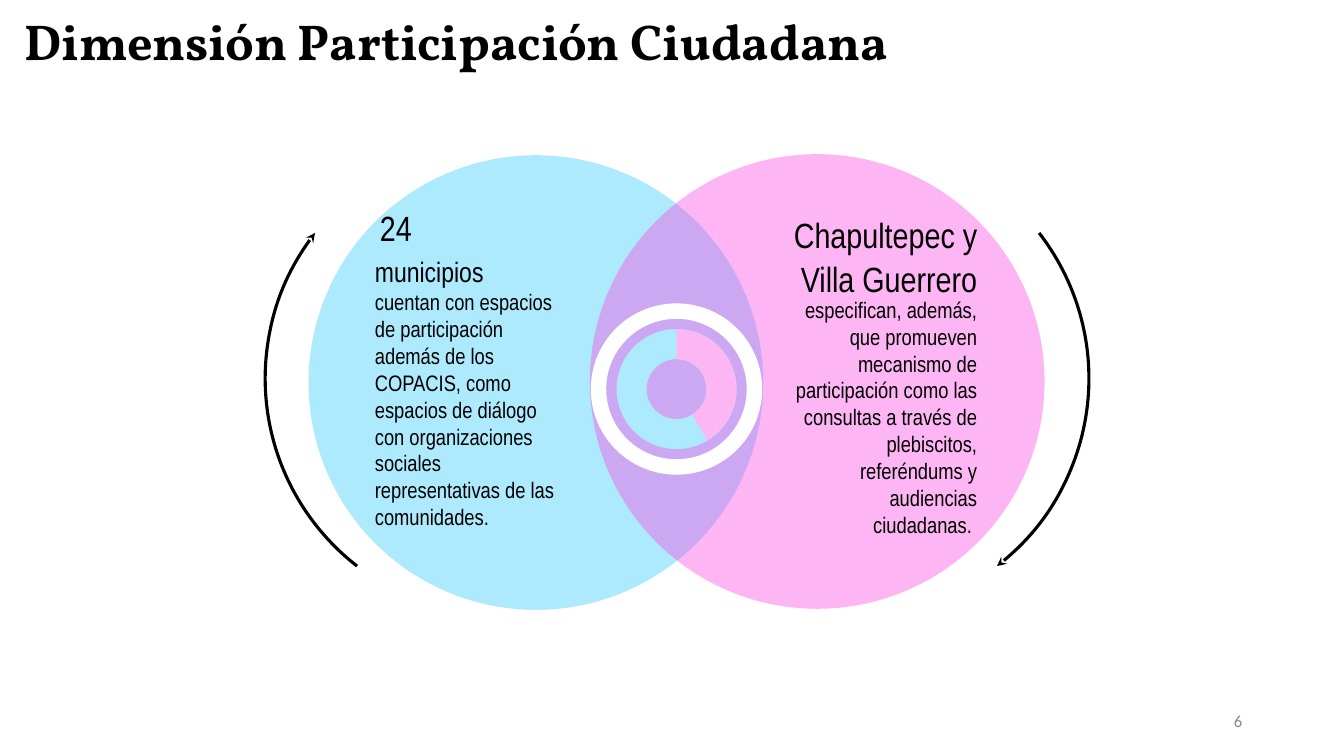
from lxml import etree
from pptx import Presentation
from pptx import util as u
from pptx.dml.color import RGBColor
from pptx.enum import shapes, text
from pptx.oxml.ns import qn

TITLE = "Dimensión Participación Ciudadana"
PAGE_NUMBER = "6"
COLORS = {"black": "000000", "grey": "888888", "white": "FFFFFF",
          "blue": "AEEAFE", "magenta": "FA47E3", "pink": "FDB6F4"}
WIDTH, HEIGHT = 13.33, 7.5
LEFT, RIGHT = text.PP_ALIGN.LEFT, text.PP_ALIGN.RIGHT
CIRCLE, ARC_SIZE = 4.51, 4.71
ARC_TOP, ARC_TILT = 1.4, 52.2
HUB = (6.71, 3.86)

# circle left and top, fill, opacity %, arc left, mirrored, arrow end
SIDES = [
    (3.06, 1.54, "blue", 100, 2.63, True, "headEnd"),
    (5.85, 1.53, "magenta", 40, 6.09, False, "tailEnd"),
]
# preset, diameter, fill, rotation, adjustments; all centred on the hub
RINGS = [
    (shapes.MSO_SHAPE.DONUT, 1.19, "blue", 0, [0.25]),
    (shapes.MSO_SHAPE.BLOCK_ARC, 1.19, "pink", 90, [107.96, 197.3, 0.25]),
    (shapes.MSO_SHAPE.DONUT, 1.7, "white", 0, [0.09]),
]
# text, size, alignment, left, top, width, height
LABELS = [
    ("cuentan con espacios de participación además de los COPACIS, como "
     "espacios de diálogo con organizaciones sociales representativas de las "
     "comunidades.", 16, LEFT, 3.62, 2.91, 2.02, 2.3),
    ("municipios", 20, LEFT, 3.62, 2.49, 2.02, 0.41),
    ("24", 25, LEFT, 3.67, 2.05, 2.02, 0.41),
    ("especifican, además, que promueven mecanismo de participación como las "
     "consultas a través de plebiscitos, referéndums y audiencias "
     "ciudadanas. ", 16, RIGHT, 7.77, 2.99, 2.02, 2.29),
    ("Villa Guerrero", 25, RIGHT, 7.31, 2.6, 2.48, 0.32),
    ("Chapultepec y", 25, RIGHT, 7.56, 2.05, 2.23, 0.55),
]


def rgb(name):
    return RGBColor.from_string(COLORS[name])


def inches(*lengths):
    return [u.Inches(length) for length in lengths]


def write(shape, content, size, font, color, alignment, inset=0.1, bold=False,
          anchor=text.MSO_ANCHOR.MIDDLE):
    frame = shape.text_frame
    frame.text = content
    frame.word_wrap = True
    frame.auto_size = text.MSO_AUTO_SIZE.NONE
    frame.vertical_anchor = anchor
    frame.margin_left = frame.margin_right = u.Inches(0.1)
    frame.margin_top = frame.margin_bottom = u.Inches(inset)
    paragraph = frame.paragraphs[0]
    paragraph.alignment = alignment
    run_font = paragraph.runs[0].font
    run_font.name, run_font.size, run_font.bold = font, u.Pt(size), bold
    run_font.color.rgb = rgb(color)


def add_filled(slide, preset, left, top, size, fill):
    shape = slide.shapes.add_shape(preset, *inches(left, top, size, size))
    shape.shadow.inherit = False
    shape.fill.solid()
    shape.fill.fore_color.rgb = rgb(fill)
    shape.line.fill.background()
    return shape


def add_arc_arrow(slide, left, mirrored, arrow_end):
    arc = slide.shapes.add_shape(
        shapes.MSO_SHAPE.ARC, *inches(left, ARC_TOP, ARC_SIZE, ARC_SIZE))
    arc.shadow.inherit = False
    arc.fill.background()
    arc.line.color.rgb = rgb("black")
    arc.line.width = u.Pt(2.25)
    arc.rotation = 360 - ARC_TILT if mirrored else ARC_TILT
    properties = arc.element.spPr
    if mirrored:
        properties.find(qn("a:xfrm")).set("flipH", "1")
    etree.SubElement(properties.find(qn("a:ln")), qn("a:" + arrow_end),
                     type="stealth")


def add_side(slide, left, top, fill, opacity, arc_left, mirrored, arrow_end):
    add_arc_arrow(slide, arc_left, mirrored, arrow_end)
    circle = add_filled(slide, shapes.MSO_SHAPE.OVAL, left, top, CIRCLE, fill)
    if opacity < 100:
        color = circle.element.spPr.find(qn("a:solidFill"))[0]
        etree.SubElement(color, qn("a:alpha"), val=str(opacity * 1000))


def main():
    presentation = Presentation()
    presentation.slide_width, presentation.slide_height = inches(WIDTH, HEIGHT)
    slide = presentation.slides.add_slide(presentation.slide_layouts[5])

    number = slide.shapes.add_textbox(*inches(9.42, 6.95, 3, 0.4))
    write(number, PAGE_NUMBER, 12, "Calibri", "grey", RIGHT, inset=0.05)

    title = slide.shapes.title
    title.left, title.top, title.width, title.height = inches(0.14, 0, 10.47, 0.81)
    write(title, TITLE, 36, "Vollkorn", "black", text.PP_ALIGN.JUSTIFY,
          bold=True, anchor=text.MSO_ANCHOR.TOP)

    for side in SIDES:
        add_side(slide, *side)

    for preset, size, fill, rotation, adjustments in RINGS:
        ring = add_filled(slide, preset, HUB[0] - size / 2, HUB[1] - size / 2,
                          size, fill)
        ring.rotation = rotation
        for index, value in enumerate(adjustments):
            ring.adjustments[index] = value

    for content, size, alignment, *box in LABELS:
        label = slide.shapes.add_textbox(*inches(*box))
        write(label, content, size, "Arial Narrow", "black", alignment)

    presentation.save("out.pptx")


if __name__ == "__main__":
    main()
